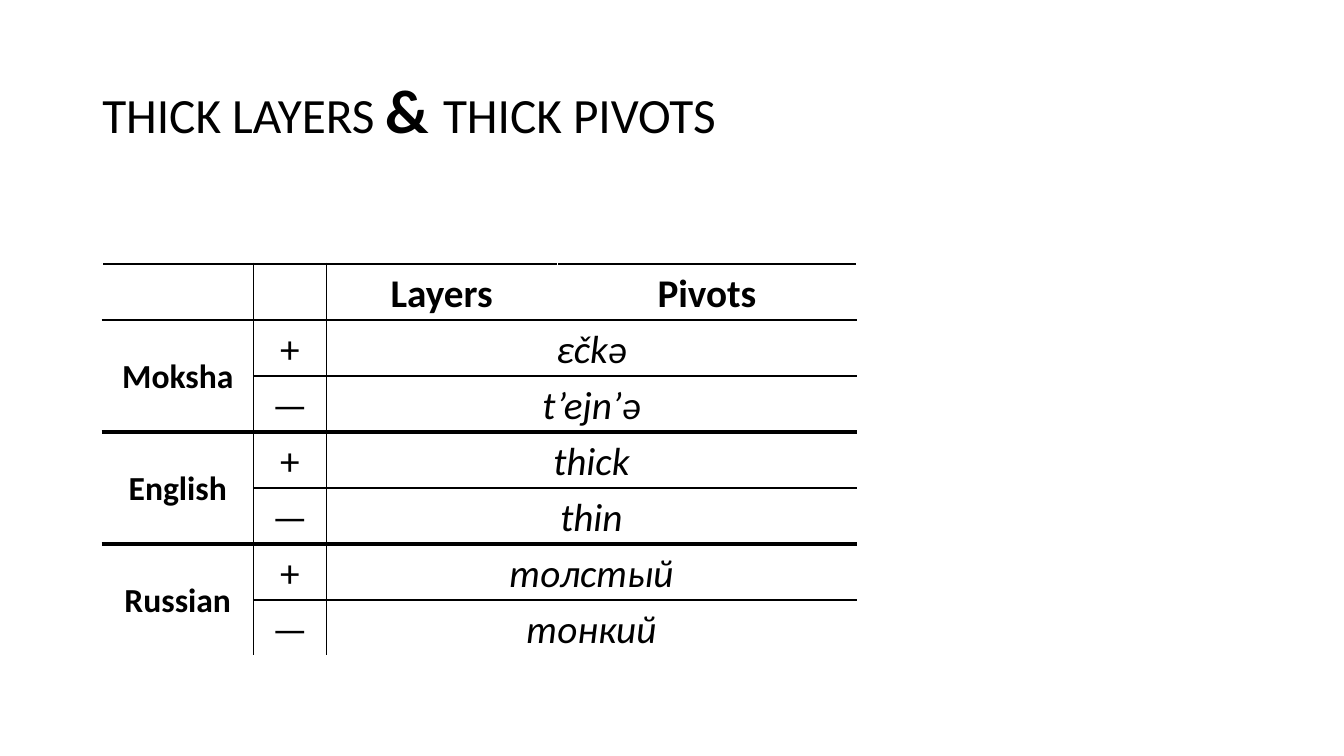
from lxml import etree
from pptx import Presentation
from pptx.dml.color import RGBColor
from pptx.enum.text import MSO_ANCHOR, PP_ALIGN
from pptx.oxml.ns import qn
from pptx.util import Pt

MIDDLE = MSO_ANCHOR.MIDDLE
CENTER = PP_ALIGN.CENTER
FACE = "Calibri"
INK = "000000"
PAPER = "FFFFFF"

WIDTHS = [108, 52, 165, 214]
HEIGHT = 40
WORDS = [
    ("Moksha", "ɛčkə", "t’ejn’ə"),
    ("English", "thick", "thin"),
    ("Russian", "толстый", "тонкий"),
]
RULES = [(INK, 2.25), (INK, 2.25), (INK, 1), (INK, 3), (INK, 1), (INK, 3), (INK, 1), (PAPER, 1)]
SIDES = [(PAPER, 1), (INK, 1), (INK, 1), (PAPER, 1), (PAPER, 1)]


def tint(font, color):
    font.color.rgb = RGBColor.from_string(color)


def style(para, size):
    para.font.name = FACE
    para.font.size = Pt(size)
    tint(para.font, INK)


def add_title(slide, parts):
    box = slide.shapes.add_textbox(Pt(66), Pt(28.8), Pt(828), Pt(104.4))
    frame = box.text_frame
    frame.word_wrap = True
    frame.vertical_anchor = MIDDLE
    para = frame.paragraphs[0]
    para.line_spacing = 0.9
    style(para, 44)
    for text, small in parts:
        run = para.add_run()
        run.text = text
        run.font.bold = not small
        if small:
            run._r.get_or_add_rPr().set("cap", "small")


def add_edge(cell, tag, rule):
    color, width = rule
    line = etree.SubElement(cell._tc.get_or_add_tcPr(), qn(tag), w=str(Pt(width)))
    fill = etree.SubElement(line, qn("a:solidFill"))
    etree.SubElement(fill, qn("a:srgbClr"), val=color)


def frame_cell(table, row, col):
    cell = table.cell(row, col)
    above, below = RULES[row], RULES[row + 1]
    if col == 0 and row > 0:
        if row % 2:
            below = RULES[row + 2]
        else:
            above = (PAPER, 1)
    add_edge(cell, "a:lnL", SIDES[col])
    add_edge(cell, "a:lnR", SIDES[col + 1])
    add_edge(cell, "a:lnT", above)
    add_edge(cell, "a:lnB", below)
    cell.fill.background()


def write(cell, text, size=28, bold=False, italic=False):
    cell.vertical_anchor = MIDDLE
    cell.margin_left = cell.margin_right = Pt(5)
    cell.margin_top = cell.margin_bottom = 0
    para = cell.text_frame.paragraphs[0]
    para.text = text
    para.alignment = CENTER
    para.line_spacing = 1.07
    para.space_before = Pt(3)
    style(para, size)
    para.font.bold = bold
    para.font.italic = italic


def add_grid(slide):
    count = len(RULES) - 1
    shape = slide.shapes.add_table(
        count, len(WIDTHS), Pt(73), Pt(188.6), Pt(sum(WIDTHS)), Pt(count * HEIGHT))
    table = shape.table
    table.first_row = table.horz_banding = False
    for col, width in zip(table.columns, WIDTHS):
        col.width = Pt(width)
    for row in range(count):
        table.rows[row].height = Pt(HEIGHT)
        for col in range(len(WIDTHS)):
            frame_cell(table, row, col)
    return table


def fill_grid(table):
    write(table.cell(0, 2), "Layers", bold=True)
    write(table.cell(0, 3), "Pivots", bold=True)
    for group, (name, *pair) in enumerate(WORDS):
        top = 1 + 2 * group
        table.cell(top, 0).merge(table.cell(top + 1, 0))
        write(table.cell(top, 0), name, size=24, bold=True)
        for row, (sign, word) in enumerate(zip("+—", pair), top):
            table.cell(row, 2).merge(table.cell(row, 3))
            write(table.cell(row, 1), sign)
            write(table.cell(row, 2), word, italic=True)


def main():
    deck = Presentation()
    deck.slide_width = Pt(960)
    deck.slide_height = Pt(540)
    slide = deck.slides.add_slide(deck.slide_layouts[6])
    add_title(slide, [("thick layers ", True), ("& ", False), ("thick pivots", True)])
    fill_grid(add_grid(slide))
    deck.save("out.pptx")


if __name__ == "__main__":
    main()
